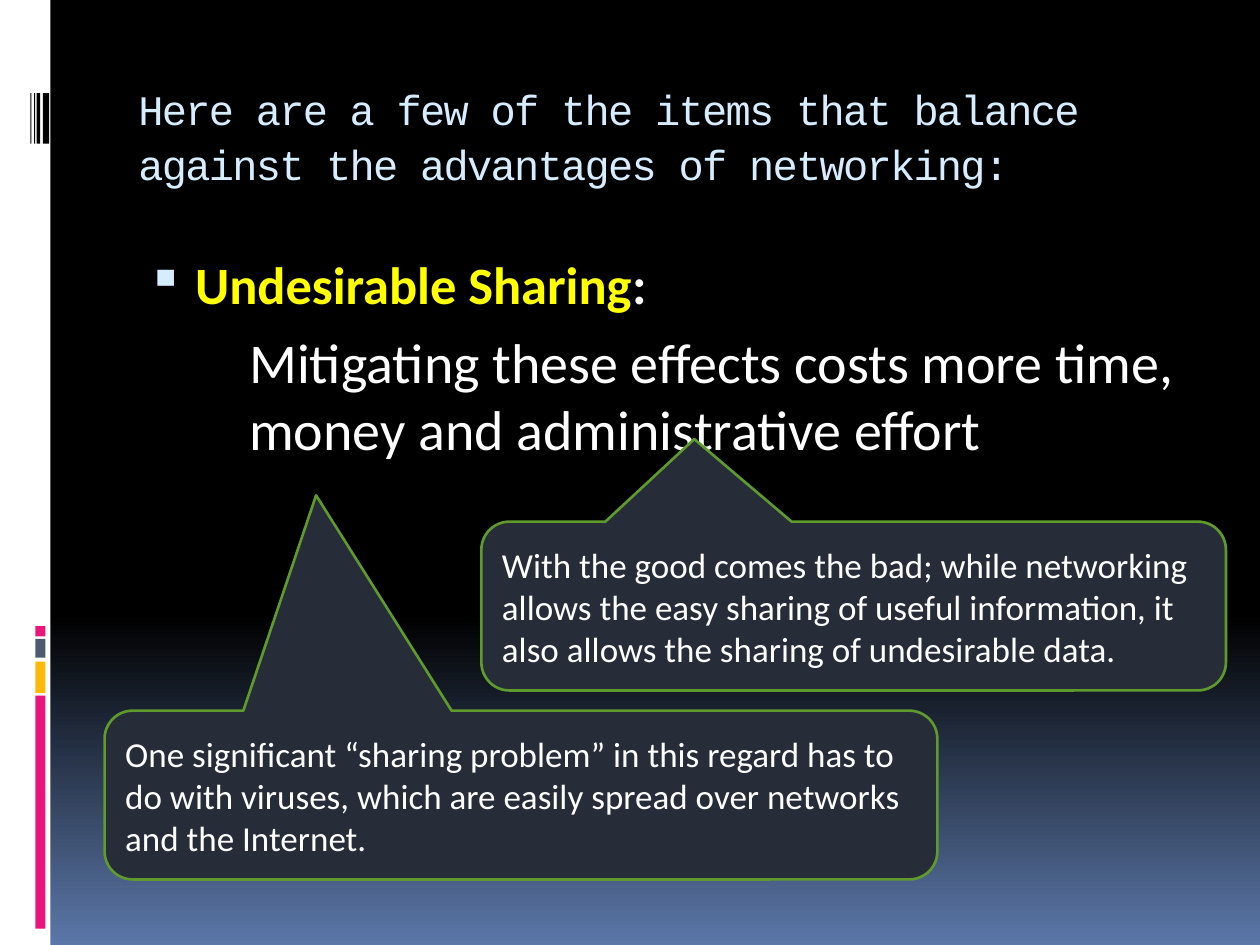
from lxml import etree
from pptx import Presentation
from pptx.dml.color import RGBColor
from pptx.enum.shapes import MSO_SHAPE as Shape
from pptx.enum.text import MSO_ANCHOR as Anchor, PP_ALIGN as Align
from pptx.oxml.ns import qn
from pptx.util import Inches, Pt


def rgb(hex_color):
    return RGBColor.from_string(hex_color)


def set_font(font, name, size, color):
    font.name, font.size = name, Pt(size)
    font.color.rgb = rgb(color)


prs = Presentation()
prs.slide_width, prs.slide_height = Inches(10), Inches(7.5)
slide = prs.slides.add_slide(prs.slide_layouts[6])

# Background: black fading to blue at the bottom
backdrop = slide.background.fill
backdrop.gradient()
backdrop.gradient_angle = 270
for stop, (position, color) in zip(backdrop.gradient_stops,
                                   [(0.65, "000000"), (1, "5B77A8")]):
    stop.position = position
    stop.color.rgb = rgb(color)

# Side strip with its colour blocks and barcode: left, top, width, height, fill
strip_parts = [(0, 0, 0.4, 7.5, "FFFFFF")]
strip_parts += [(0.28, top, 0.08, height, color) for top, height, color in [
    (5.52, 1.85, "EA157A"), (5.25, 0.25, "FEB80A"),
    (5.07, 0.15, "4E5B6F"), (4.97, 0.08, "EA157A")]]
strip_parts += [(left, 0.74, width, 0.4, "000000") for left, width in [
    (0.34, 0.05), (0.29, 0.03), (0.27, 0.01), (0.24, 0.01)]]
for *box, color in strip_parts:
    part = slide.shapes.add_shape(Shape.RECTANGLE, *map(Inches, box))
    part.shadow.inherit = False
    part.fill.solid()
    part.fill.fore_color.rgb = rgb(color)
    part.line.fill.background()

# Title
title = slide.shapes.add_textbox(
    Inches(1), Inches(0.58), Inches(8.5), Inches(1)).text_frame
title.word_wrap = True
heading = title.paragraphs[0]
heading.line_spacing = 1.09
heading_run = heading.add_run()
heading_run.text = ("Here are a few of the items that balance "
                    "against the advantages of networking:")
set_font(heading.font, "Courier New", 24, "D6ECFF")
heading_run.font._element.set("spc", "-100")

# Body: bulleted term and its explanation
body = slide.shapes.add_textbox(
    Inches(1), Inches(1.95), Inches(8.5), Inches(5)).text_frame
body.word_wrap = True
term = body.paragraphs[0]
set_font(term.font, "Calibri", 30, "FFFFFF")
term.font.bold = True
for text, color in [("Undesirable Sharing", "FFFF00"), (":", "FFFFFF")]:
    run = term.add_run()
    run.text = text
    run.font.color.rgb = rgb(color)

explanation = body.add_paragraph()
explanation.text = ("Mitigating these effects costs more time, "
                    "money and administrative effort")
set_font(explanation.font, "Calibri", 32, "FFFFFF")

for paragraph, margin, indent in [(term, 0.45, -0.38), (explanation, 0.88, 0)]:
    paragraph.space_before = Pt(7)
    properties = paragraph._p.get_or_add_pPr()
    properties.set("marL", str(Inches(margin)))
    properties.set("indent", str(Inches(indent)))

# Bullet elements go between the spacing and the default font
bullet_color = etree.Element(qn("a:buClr"))
etree.SubElement(bullet_color, qn("a:srgbClr"), val="D6ECFF")
default_font = term._p.pPr.find(qn("a:defRPr"))
for bullet_part in (bullet_color,
                    etree.Element(qn("a:buSzPct"), val="95000"),
                    etree.Element(qn("a:buChar"), char="▪")):
    default_font.addprevious(bullet_part)

# Callouts: left, top, width, pointer x and y, text
callouts = [
    (3.82, 4.14, 5.91, -0.214, -0.989,
     "With the good comes the bad; while networking allows the easy sharing "
     "of useful information, it also allows the sharing of undesirable data."),
    (0.83, 5.64, 6.61, -0.246, -1.775,
     "One significant “sharing problem” in this regard has to do with viruses, "
     "which are easily spread over networks and the Internet."),
]
for left, top, width, pointer_x, pointer_y, text in callouts:
    callout = slide.shapes.add_shape(
        Shape.ROUNDED_RECTANGULAR_CALLOUT,
        Inches(left), Inches(top), Inches(width), Inches(1.34))
    callout.adjustments[0] = pointer_x
    callout.adjustments[1] = pointer_y
    callout.shadow.inherit = False
    callout.fill.solid()
    callout.fill.fore_color.rgb = rgb("272D38")
    callout.line.color.rgb = rgb("5E9B2C")
    callout.line.width = Pt(1.5)
    callout.text_frame.word_wrap = True
    callout.text_frame.vertical_anchor = Anchor.MIDDLE
    remark = callout.text_frame.paragraphs[0]
    remark.text = text
    remark.alignment = Align.LEFT
    set_font(remark.font, "Calibri", 20, "FFFFFF")

prs.save("out.pptx")
